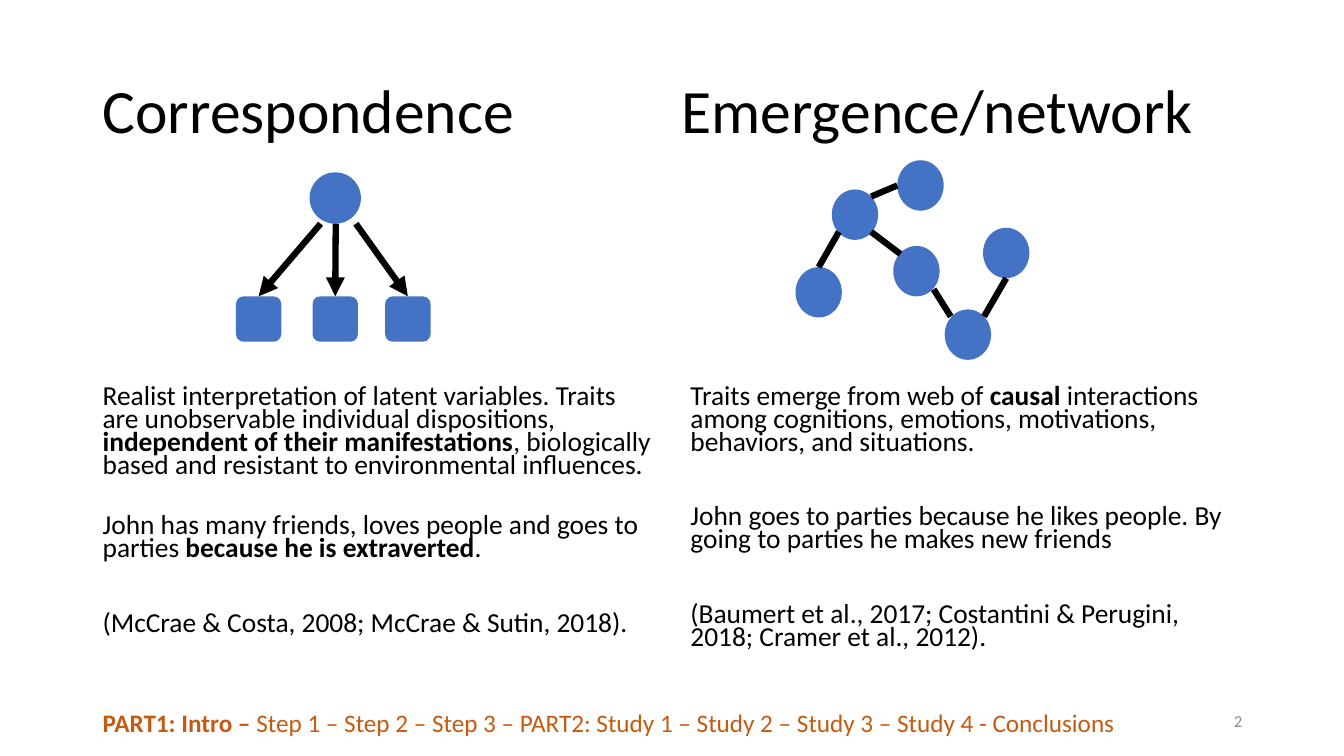
from pptx import Presentation
from pptx.dml.color import RGBColor
from pptx.enum.shapes import MSO_CONNECTOR, MSO_SHAPE
from pptx.enum.text import MSO_ANCHOR, PP_ALIGN
from pptx.oxml.ns import qn
from pptx.util import Inches, Pt
from lxml import etree

BLACK = RGBColor(0x00, 0x00, 0x00)
BLUE = RGBColor(0x44, 0x72, 0xC4)
ORANGE = RGBColor(0xC5, 0x5A, 0x11)
GRAY = RGBColor(0x8C, 0x8C, 0x8C)
OVAL, ROUNDED = MSO_SHAPE.OVAL, MSO_SHAPE.ROUNDED_RECTANGLE
STRAIGHT = MSO_CONNECTOR.STRAIGHT
TOP, MIDDLE = MSO_ANCHOR.TOP, MSO_ANCHOR.MIDDLE
LEFT, RIGHT = PP_ALIGN.LEFT, PP_ALIGN.RIGHT

prs = Presentation()
prs.slide_width, prs.slide_height = Inches(13.33), Inches(7.5)
s = prs.slides.add_slide(prs.slide_layouts[6])


def add_text(box, paragraphs, size, color=BLACK, anchor=TOP, align=LEFT, spacing=1.0):
    tf = s.shapes.add_textbox(*[Inches(v) for v in box]).text_frame
    tf.word_wrap = True
    tf.vertical_anchor = anchor
    for i, (before, runs) in enumerate(paragraphs):
        p = tf.paragraphs[0] if i == 0 else tf.add_paragraph()
        for name, value in {"alignment": align, "line_spacing": spacing,
                            "space_before": Pt(before)}.items():
            setattr(p, name, value)
        for text, bold in runs:
            r = p.add_run()
            r.text = text
            for name, value in {"name": "Calibri", "size": Pt(size), "bold": bold}.items():
                setattr(r.font, name, value)
            r.font.color.rgb = color


def add_line(x1, y1, x2, y2, arrow=False):
    line = s.shapes.add_connector(STRAIGHT, Inches(x1), Inches(y1), Inches(x2), Inches(y2))
    line.line.color.rgb = BLACK
    line.line.width = Pt(4.5)
    if arrow:
        etree.SubElement(line.line._get_or_add_ln(), qn("a:tailEnd"), type="triangle")
    etree.SubElement(line._element.spPr, qn("a:effectLst"))
    return line


for x, width, title in [(0.92, 5.6, "Correspondence"), (6.66, 5.8, "Emergence/network")]:
    add_text((x, 0.4, width, 1.45), [(0, [(title, False)])], 44, anchor=MIDDLE, spacing=0.9)

correspondence = [
    (10, [("Realist interpretation of latent variables. Traits are unobservable "
           "individual dispositions, ", False),
          ("independent of their manifestations", True),
          (", biologically based and resistant to environmental influences.", False)]),
    (26.7, [("John has many friends, loves people and goes to parties ", False),
            ("because he is extraverted", True), (".", False)]),
    (36.7, [("(McCrae & Costa, 2008; McCrae & Sutin, 2018).", False)]),
]
emergence = [
    (10, [("Traits emerge from web of ", False), ("causal ", True),
          ("interactions among cognitions, emotions, motivations, behaviors, "
           "and situations.", False)]),
    (36.7, [("John goes to parties because he likes people. By going to parties "
             "he makes new friends", False)]),
    (36.7, [("(Baumert et al., 2017; Costantini & Perugini, 2018; "
             "Cramer et al., 2012).", False)]),
]
for x, paragraphs in [(0.92, correspondence), (6.75, emergence)]:
    add_text((x, 3.79, 5.67, 2.97), paragraphs, 19.6, spacing=0.7)

add_text((9.42, 6.95, 3, 0.4), [(0, [("2", False)])], 12, GRAY, MIDDLE, RIGHT)

latent = [(OVAL, 3.07, 1.71, 0.51, 0.51)]
indicators = [(ROUNDED, x, 2.94, 0.45, 0.45) for x in (2.34, 3.1, 3.82)]
network = [(OVAL, x, y, 0.46, 0.5) for x, y in
           [(8.9, 1.59), (8.25, 1.88), (9.37, 3.07), (9.75, 2.26), (8.86, 2.44), (7.89, 2.65)]]
nodes = []
for kind, *box in latent + indicators + network:
    sp = s.shapes.add_shape(kind, *[Inches(v) for v in box])
    sp.shadow.inherit = False
    sp.fill.solid()
    sp.fill.fore_color.rgb = BLUE
    sp.line.fill.background()
    nodes.append(sp)

for start_x, end_x, indicator in zip((3.18, 3.33, 3.53), (2.57, 3.33, 4.05), nodes[1:4]):
    arrow = add_line(start_x, 2.22, end_x, 2.94, arrow=True)
    arrow.end_connect(indicator, 0)

for ends in [(8.64, 1.95, 8.9, 1.84), (8.32, 2.3, 8.12, 2.65), (8.64, 2.3, 8.93, 2.52),
             (9.26, 2.87, 9.43, 3.14), (9.76, 3.14, 9.98, 2.76)]:
    add_line(*ends)

add_text((0.92, 6.97, 11.77, 0.4),
         [(0, [("PART1: Intro –", True),
               (" Step 1 – Step 2 – Step 3 – PART2: Study 1 – Study 2 – Study 3 – "
                "Study 4 - Conclusions", False)])], 18, ORANGE)

prs.save("out.pptx")
